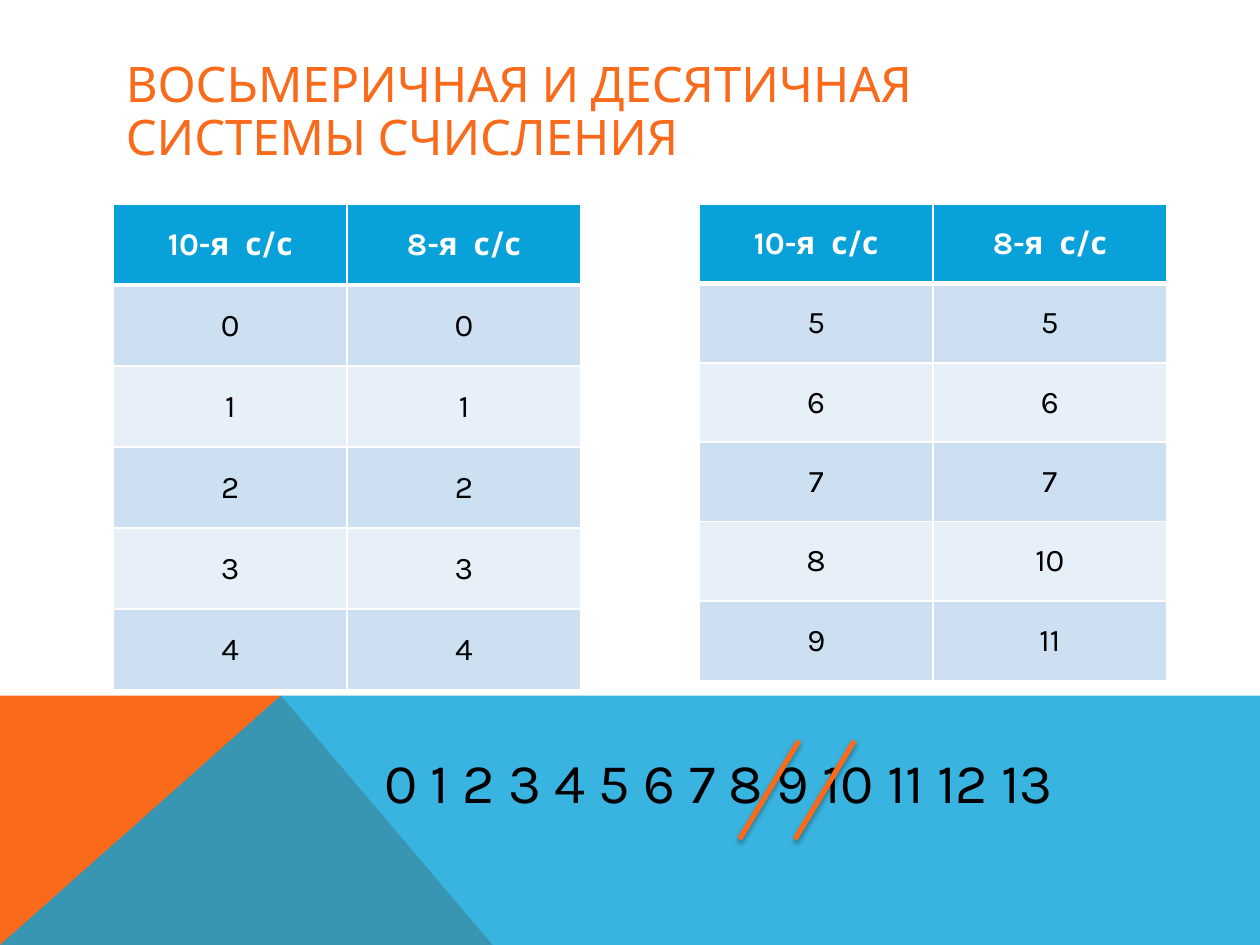
from lxml.etree import SubElement
from pptx import Presentation
from pptx.dml.color import RGBColor
from pptx.enum.shapes import MSO_CONNECTOR
from pptx.enum.text import MSO_ANCHOR, PP_ALIGN
from pptx.oxml.ns import qn
from pptx.util import Inches, Pt

TITLE = "ВОСЬМЕРИЧНАЯ И ДЕСЯТИЧНАЯ СИСТЕМЫ СЧИСЛЕНИЯ"
HEADER = ("10-я  с/с", "8-я  с/с")
LOW_DIGITS = [("0", "0"), ("1", "1"), ("2", "2"), ("3", "3"), ("4", "4")]
HIGH_DIGITS = [("5", "5"), ("6", "6"), ("7", "7"), ("8", "10"), ("9", "11")]
COUNTING = "0 1 2 3 4 5 6 7 8 9 10 11 12 13"

FONT = "Karla"
COLORS = {
    "orange": "F96A1B", "blue": "08A1D9", "white": "FFFFFF",
    "black": "000000", "band_dark": "CCE0F1", "band_light": "E7F0F8",
}
WIDTH, HEIGHT = 10, 7.5
MARGIN = 0.09 * WIDTH
TABLE_TOP = 1.62
COLUMN_WIDTH = 1.855
TABLES = [(MARGIN, 0.643, LOW_DIGITS), (5.55, 0.63, HIGH_DIGITS)]
FOOTER_TOP, PEAK = 5.52, 2.23
COUNTING_TOP = 5.88
STRIKE_LEFT, STRIKE_GAP, STRIKE_WIDTH, STRIKE_HEIGHT = 5.87, 0.44, 0.47, 0.78


def rgb(name):
    return RGBColor.from_string(COLORS[name])


def write(frame, text, size, color, bold=False, align=PP_ALIGN.LEFT):
    paragraph = frame.paragraphs[0]
    paragraph.text = text
    paragraph.alignment = align
    font = paragraph.font
    font.name, font.size, font.bold = FONT, Pt(size), bold
    font.color.rgb = rgb(color)
    return paragraph


def add_text(slide, box, text, size, color, anchor):
    frame = slide.shapes.add_textbox(*map(Inches, box)).text_frame
    frame.word_wrap = True
    frame.vertical_anchor = anchor
    return write(frame, text, size, color)


def add_footer_part(slide, points, color, opacity=100):
    start, *rest = [(Inches(x), Inches(y)) for x, y in points]
    builder = slide.shapes.build_freeform(*start)
    builder.add_line_segments(rest, close=True)
    part = builder.convert_to_shape()
    part.shadow.inherit = False
    part.line.fill.background()
    part.fill.solid()
    part.fill.fore_color.rgb = rgb(color)
    if opacity < 100:
        fill_color = part._element.spPr.find(".//" + qn("a:srgbClr"))
        SubElement(fill_color, qn("a:alpha"), val=str(opacity * 1000))


def add_borders(cell, widths):
    properties = cell._tc.get_or_add_tcPr()
    for side, width in widths.items():
        border = SubElement(properties, qn(f"a:ln{side}"), w=str(Pt(width)))
        fill = SubElement(border, qn("a:solidFill"))
        SubElement(fill, qn("a:srgbClr"), val=COLORS["white"])


def add_digits_table(slide, left, row_height, digits):
    rows = [HEADER, *digits]
    table = slide.shapes.add_table(
        len(rows), len(HEADER), Inches(left), Inches(TABLE_TOP),
        Inches(COLUMN_WIDTH * len(HEADER)), Inches(row_height * len(rows))).table
    for column in table.columns:
        column.width = Inches(COLUMN_WIDTH)
    for r, values in enumerate(rows):
        table.rows[r].height = Inches(row_height)
        is_header = r == 0
        fill = "blue" if is_header else "band_dark" if r % 2 else "band_light"
        borders = {"L": 1, "R": 1, "T": 3 if r == 1 else 1, "B": 3 if is_header else 1}
        for c, value in enumerate(values):
            cell = table.cell(r, c)
            add_borders(cell, borders)
            cell.fill.solid()
            cell.fill.fore_color.rgb = rgb(fill)
            cell.vertical_anchor = MSO_ANCHOR.MIDDLE
            write(cell.text_frame, value, 18, "white" if is_header else "black",
                  is_header, PP_ALIGN.CENTER)


def add_strike(slide, left):
    strike = slide.shapes.add_connector(
        MSO_CONNECTOR.STRAIGHT, Inches(left + STRIKE_WIDTH), Inches(COUNTING_TOP),
        Inches(left), Inches(COUNTING_TOP + STRIKE_HEIGHT))
    strike.line.color.rgb = rgb("orange")
    strike.line.width = Pt(3)
    effects = SubElement(strike._element.spPr, qn("a:effectLst"))
    shadow = SubElement(effects, qn("a:outerShdw"), blurRad=str(Pt(3.1)),
                        dist=str(Pt(1.8)), dir="5400000", rotWithShape="0")
    shadow_color = SubElement(shadow, qn("a:srgbClr"), val=COLORS["black"])
    SubElement(shadow_color, qn("a:alpha"), val="35000")


def main():
    presentation = Presentation()
    presentation.slide_width, presentation.slide_height = Inches(WIDTH), Inches(HEIGHT)
    slide = presentation.slides.add_slide(presentation.slide_layouts[6])

    add_footer_part(slide, [(0, HEIGHT), (0, FOOTER_TOP), (PEAK, FOOTER_TOP),
                            (3.91, HEIGHT)], "orange")
    add_footer_part(slide, [(0, HEIGHT), (PEAK, FOOTER_TOP), (WIDTH, FOOTER_TOP),
                            (WIDTH, HEIGHT)], "blue", 80)
    title = add_text(slide, (MARGIN, 0.4, 8.22, 0.99), TITLE, 28, "orange",
                     MSO_ANCHOR.MIDDLE)
    title.line_spacing = 0.9
    for left, row_height, digits in TABLES:
        add_digits_table(slide, left, row_height, digits)
    add_text(slide, (2.95, COUNTING_TOP, 6.69, 0.64), COUNTING, 32, "black",
             MSO_ANCHOR.TOP)
    for i in range(2):
        add_strike(slide, STRIKE_LEFT + i * STRIKE_GAP)

    presentation.save("out.pptx")


if __name__ == "__main__":
    main()
